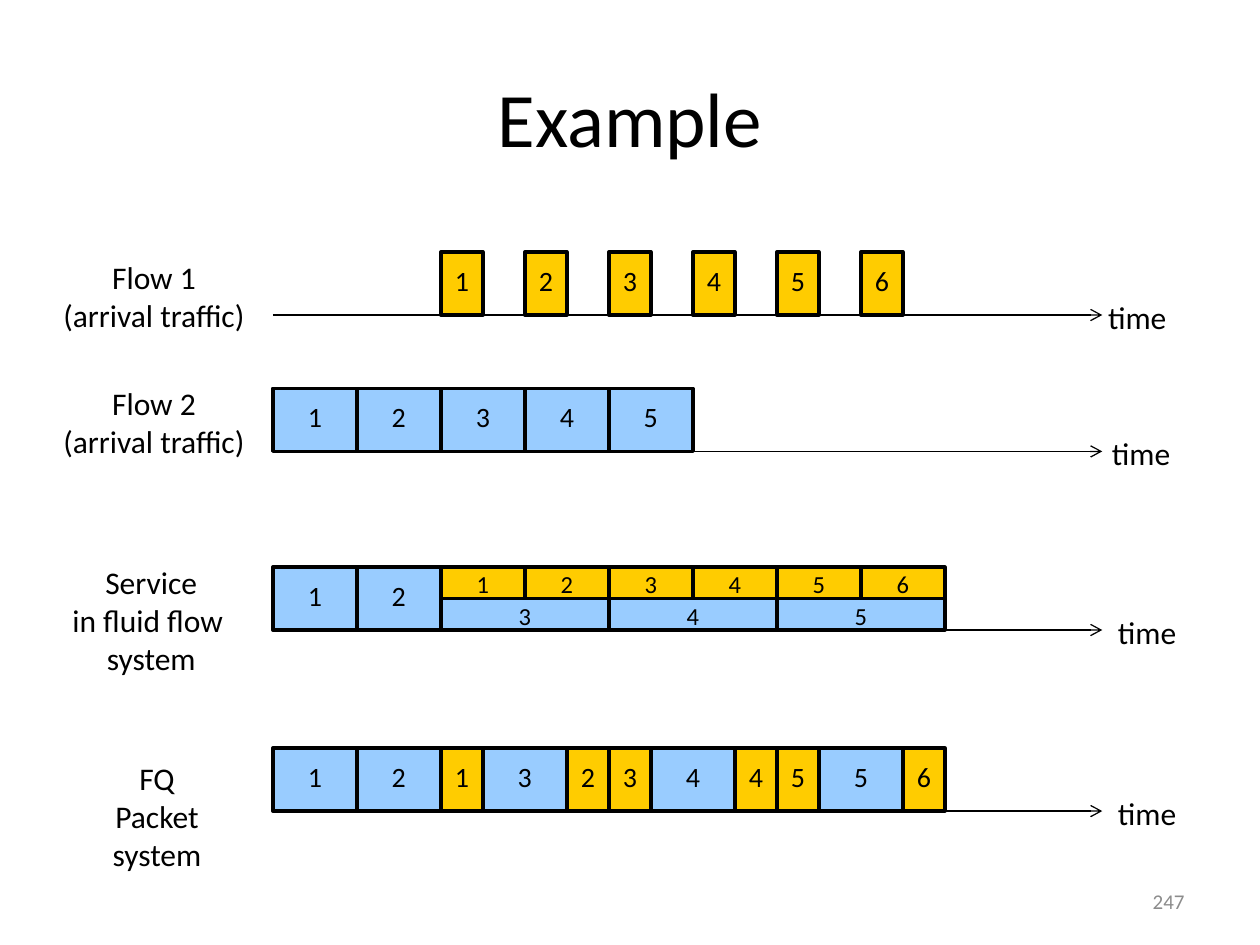
from dataclasses import dataclass

from lxml.etree import SubElement
from pptx import Presentation
from pptx.dml.color import RGBColor
from pptx.enum.shapes import MSO_CONNECTOR, MSO_SHAPE
from pptx.enum.text import MSO_ANCHOR, PP_ALIGN
from pptx.oxml.ns import qn
from pptx.util import Cm, Pt

FONT = "Calibri"
BLACK, GREY, YELLOW, BLUE = "000000", "8C8C8C", "FFCC00", "99CCFF"
SLOT = 2.54 / 3
ROW_LEFT, ROW_WIDTH, ROW_HEIGHT = 5.5, 16.72, 1.27


@dataclass
class Box:
    """A rectangle in centimetres."""
    left: float
    top: float
    width: float
    height: float

    def lengths(self):
        """Return the four measures as slide lengths."""
        return [Cm(value) for value in (self.left, self.top, self.width, self.height)]


@dataclass
class Packet:
    """A numbered packet, measured in time slots and shares of the row height."""
    number: int
    start: int
    slots: int
    fill: str
    top: float = 0
    share: float = 1


def color(value):
    """Turn a hex string into a colour."""
    return RGBColor.from_string(value)


def write(paragraph, text, size, text_color=BLACK, alignment=PP_ALIGN.CENTER):
    """Fill a paragraph, with a line break at each newline."""
    paragraph.alignment = alignment
    for index, line in enumerate(text.split("\n")):
        if index:
            paragraph.add_line_break()
        run = paragraph.add_run()
        run.text = line
        run.font.name = FONT
        run.font.size = Pt(size)
        run.font.color.rgb = color(text_color)


def add_text(slide, box, paragraphs, size, wrap=False, anchor=MSO_ANCHOR.TOP, **style):
    """Place a text box with one or more paragraphs."""
    frame = slide.shapes.add_textbox(*box.lengths()).text_frame
    frame.word_wrap = wrap
    frame.vertical_anchor = anchor
    for index, text in enumerate(paragraphs):
        paragraph = frame.add_paragraph() if index else frame.paragraphs[0]
        write(paragraph, text, size, **style)


def add_axis(slide, box):
    """Draw the time arrow along the bottom of a row."""
    bottom = Cm(box.top + box.height)
    axis = slide.shapes.add_connector(
        MSO_CONNECTOR.STRAIGHT, Cm(box.left), bottom, Cm(box.left + box.width), bottom)
    axis.line.color.rgb = color(BLACK)
    axis.line.width = Pt(0.75)
    SubElement(axis.line._get_or_add_ln(), qn("a:tailEnd"), type="arrow")
    SubElement(axis._element.spPr, qn("a:effectLst"))


def add_packet(slide, box, packet):
    """Draw a packet inside its row."""
    area = Box(box.left + packet.start * SLOT, box.top + packet.top * box.height,
               packet.slots * SLOT, packet.share * box.height)
    shape = slide.shapes.add_shape(MSO_SHAPE.RECTANGLE, *area.lengths())
    shape.shadow.inherit = False
    shape.fill.solid()
    shape.fill.fore_color.rgb = color(packet.fill)
    shape.line.color.rgb = color(BLACK)
    shape.line.width = Pt(2)
    full = packet.share == 1
    frame = shape.text_frame
    frame.word_wrap = False
    frame.vertical_anchor = MSO_ANCHOR.MIDDLE
    frame.margin_left = frame.margin_right = 0
    frame.margin_top = Cm(0 if full else 0.05)
    frame.margin_bottom = Cm(0.13 if full else 0)
    write(frame.paragraphs[0], str(packet.number), 16 if full else 14)


def add_row(slide, box, label, label_box, time_gap, packets):
    """Build a timeline row with its label, axis and packets."""
    add_axis(slide, box)
    for packet in packets:
        add_packet(slide, box, packet)
    placed = Box(box.left + label_box.left, box.top + label_box.top,
                 label_box.width, label_box.height)
    add_text(slide, placed, label, 18)
    time_box = Box(box.left + box.width + time_gap, box.top + 0.8, 1.85, 1.09)
    add_text(slide, time_box, ["time"], 18)


def fluid_packets():
    """Return the packets of the fluid system, where both flows share the link."""
    return ([Packet(n, 2 * n - 2, 2, BLUE) for n in (1, 2)]
            + [Packet(n, 2 * n + 2, 2, YELLOW, 0, 0.5) for n in range(1, 7)]
            + [Packet(n, 4 * n - 8, 4, BLUE, 0.5, 0.5) for n in range(3, 6)])


def queue_packets():
    """Return the packets of the packet system, sent one after another."""
    order = [(1, BLUE), (2, BLUE), (1, YELLOW), (3, BLUE), (2, YELLOW), (3, YELLOW),
             (4, BLUE), (4, YELLOW), (5, YELLOW), (5, BLUE), (6, YELLOW)]
    packets, start = [], 0
    for number, fill in order:
        slots = 2 if fill == BLUE else 1
        packets.append(Packet(number, start, slots, fill))
        start += slots
    return packets


def main():
    """Build and save the slide."""
    presentation = Presentation()
    presentation.slide_width, presentation.slide_height = Cm(25.4), Cm(19.05)
    slide = presentation.slides.add_slide(presentation.slide_layouts[6])
    add_text(slide, Box(1.27, 0.76, 22.86, 3.18), ["Example"], 44,
             wrap=True, anchor=MSO_ANCHOR.MIDDLE)
    rows = [
        (5.08, ["Flow 1", "(arrival traffic)"], Box(-4.82, 0, 4.85, 1.96), -0.22,
         [Packet(n, 2 * n + 2, 1, YELLOW) for n in range(1, 7)]),
        (7.83, ["Flow 2", "(arrival traffic)"], Box(-4.82, -0.21, 4.85, 1.96), -0.14,
         [Packet(n, 2 * n - 2, 2, BLUE) for n in range(1, 6)]),
        (11.43, ["Service", "in fluid flow ", "system"], Box(-4.48, -0.2, 4.06, 2.82),
         -0.02, fluid_packets()),
        (15.08, ["FQ\nPacket", "system"], Box(-3.72, 0.1, 2.77, 2.82),
         -0.02, queue_packets()),
    ]
    for top, *parts in rows:
        add_row(slide, Box(ROW_LEFT, top, ROW_WIDTH, ROW_HEIGHT), *parts)
    add_text(slide, Box(18.2, 17.66, 5.93, 1.01), ["247"], 12, wrap=True,
             anchor=MSO_ANCHOR.MIDDLE, text_color=GREY, alignment=PP_ALIGN.RIGHT)
    presentation.save("out.pptx")


if __name__ == "__main__":
    main()
